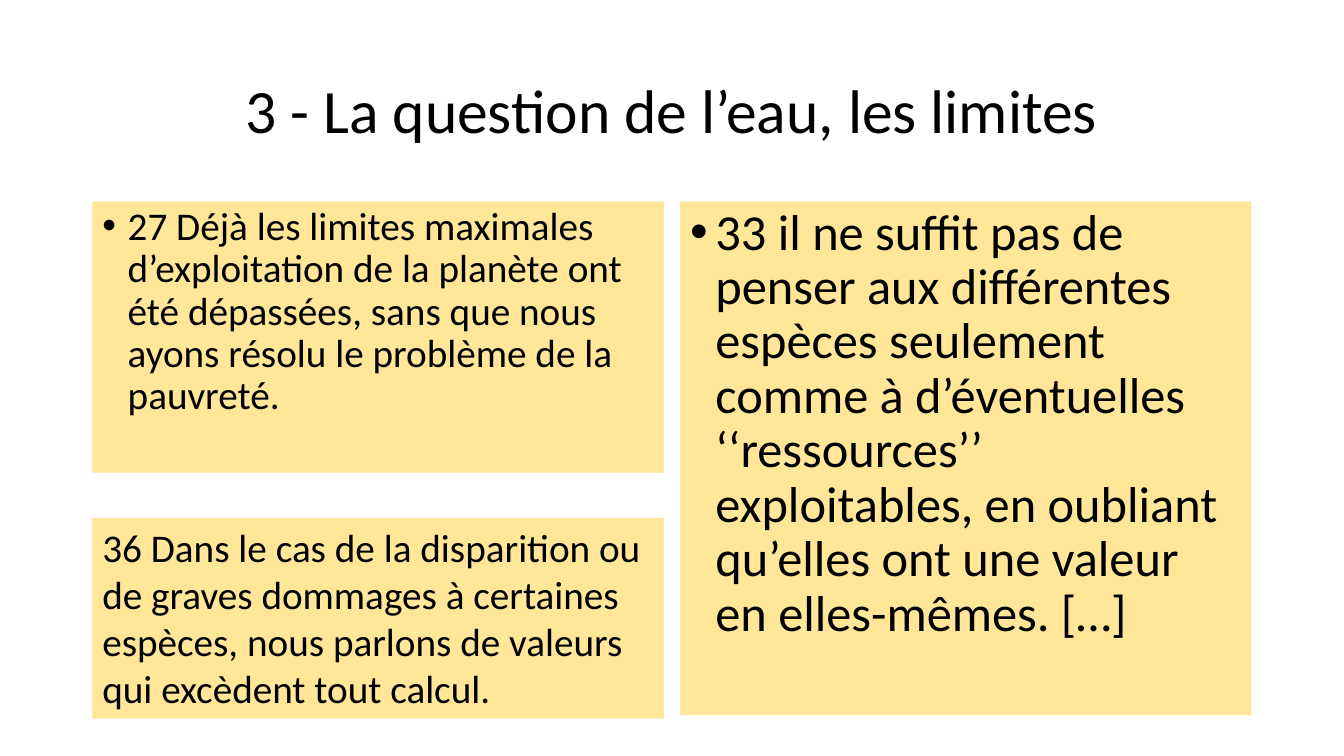
from dataclasses import dataclass

from lxml import etree
from pptx import Presentation
from pptx.dml.color import RGBColor
from pptx.enum.text import MSO_ANCHOR, PP_ALIGN
from pptx.oxml.ns import qn
from pptx.slide import Slide
from pptx.util import Cm, Pt

LEFT = PP_ALIGN.LEFT
CENTER = PP_ALIGN.CENTER
TOP = MSO_ANCHOR.TOP
MIDDLE = MSO_ANCHOR.MIDDLE

FONT = "Calibri"
BLACK = "000000"
SAND = "FFE699"

MARGIN = 2.33
CONTENT_WIDTH = 29.21
COLUMN_WIDTH = 14.4
RIGHT_COLUMN = MARGIN + CONTENT_WIDTH - COLUMN_WIDTH
QUOTES_TOP = 5.08
BULLET_INDENT = 0.64


@dataclass(frozen=True)
class TextPanel:
    left: float
    top: float
    width: float
    height: float
    text: str
    size: int
    fill: str = ""
    bulleted: bool = False
    line_spacing: float = 0.9
    alignment: PP_ALIGN = LEFT
    anchor: MSO_ANCHOR = TOP


PANELS = [
    TextPanel(
        MARGIN, 1.01, CONTENT_WIDTH, 3.68,
        "3 - La question de l’eau, les limites",
        44, alignment=CENTER, anchor=MIDDLE,
    ),
    TextPanel(
        MARGIN, QUOTES_TOP, COLUMN_WIDTH, 6.83,
        "27 Déjà les limites maximales d’exploitation de la planète ont été "
        "dépassées, sans que nous ayons résolu le problème de la pauvreté.",
        28, SAND, bulleted=True,
    ),
    TextPanel(
        MARGIN, 13.06, COLUMN_WIDTH, 5.05,
        "36 Dans le cas de la disparition ou de graves dommages à certaines "
        "espèces, nous parlons de valeurs qui excèdent tout calcul.",
        28, SAND, line_spacing=1.0,
    ),
    TextPanel(
        RIGHT_COLUMN, QUOTES_TOP, COLUMN_WIDTH, 12.95,
        "33 il ne suffit pas de penser aux différentes espèces seulement comme "
        "à d’éventuelles ‘‘ressources’’ exploitables, en oubliant qu’elles ont "
        "une valeur en elles-mêmes. […]",
        36, SAND, bulleted=True,
    ),
]


def color(code: str) -> RGBColor:
    return RGBColor.from_string(code)


def add_bullet(para) -> None:
    properties = para._p.get_or_add_pPr()
    properties.set("marL", str(Cm(BULLET_INDENT)))
    properties.set("indent", str(-Cm(BULLET_INDENT)))
    etree.SubElement(properties, qn("a:buFont")).set("typeface", "Arial")
    etree.SubElement(properties, qn("a:buChar")).set("char", "•")


def add_panel(page: Slide, panel: TextPanel) -> None:
    box = page.shapes.add_textbox(
        Cm(panel.left), Cm(panel.top), Cm(panel.width), Cm(panel.height)
    )
    if panel.fill:
        box.fill.solid()
        box.fill.fore_color.rgb = color(panel.fill)
    frame = box.text_frame
    frame.word_wrap = True
    frame.vertical_anchor = panel.anchor
    para = frame.paragraphs[0]
    para.alignment = panel.alignment
    para.line_spacing = panel.line_spacing
    if panel.bulleted:
        add_bullet(para)
    span = para.add_run()
    span.text = panel.text
    span.font.name = FONT
    span.font.size = Pt(panel.size)
    span.font.color.rgb = color(BLACK)


def main() -> None:
    deck = Presentation()
    deck.slide_width = Cm(33.87)
    deck.slide_height = Cm(19.05)
    page = deck.slides.add_slide(deck.slide_layouts[6])
    for panel in PANELS:
        add_panel(page, panel)
    deck.save("out.pptx")


if __name__ == "__main__":
    main()
